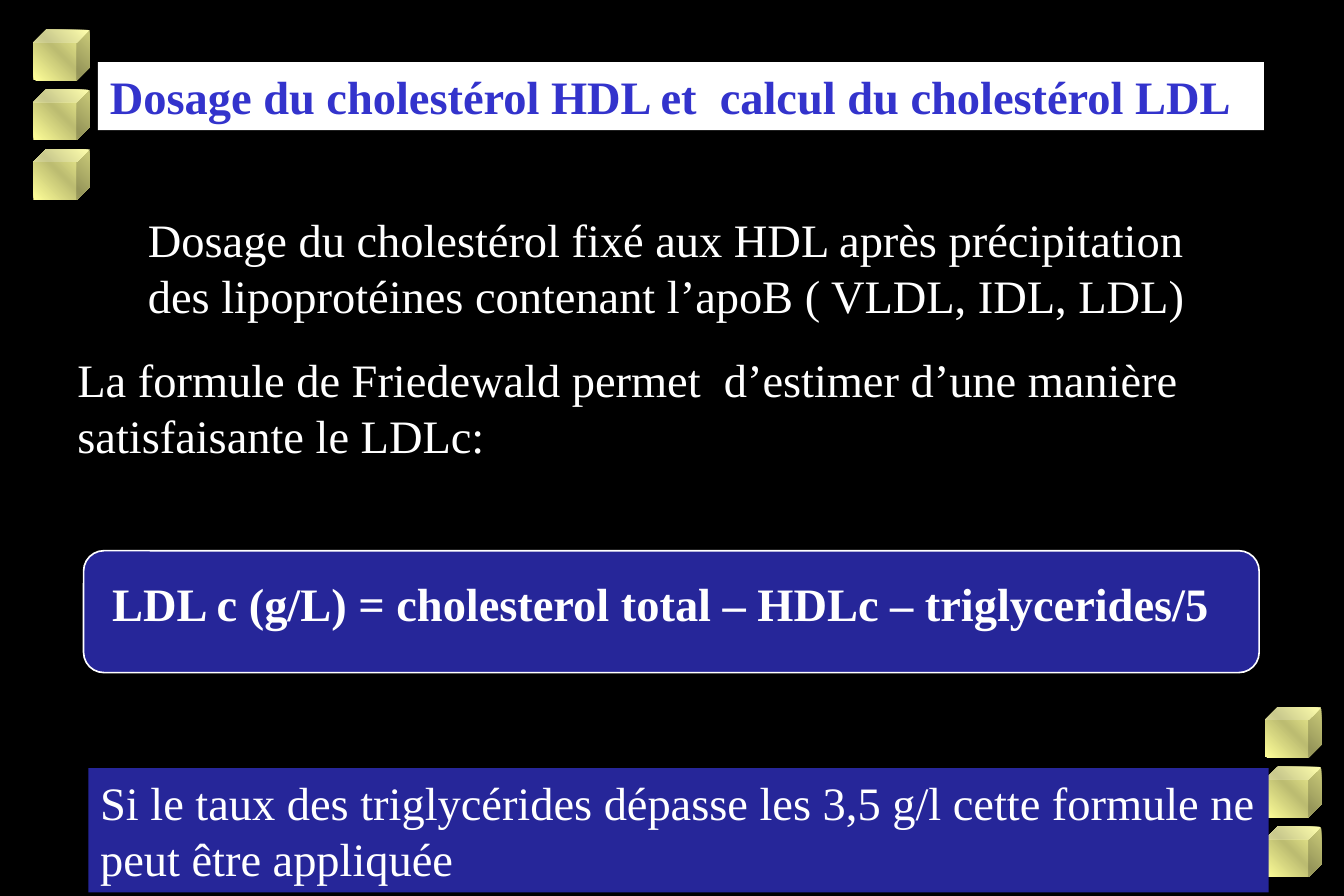
from copy import deepcopy

from pptx import Presentation
from pptx.dml.color import RGBColor
from pptx.enum.shapes import MSO_SHAPE as Shape
from pptx.enum.text import MSO_ANCHOR as Anchor, PP_ALIGN as Align
from pptx.util import Pt

PX = 9144  # 100 px to the inch
BLACK = RGBColor(0, 0, 0)
WHITE = RGBColor(255, 255, 255)
BLUE = RGBColor(0x33, 0x33, 0xCC)
NAVY = RGBColor(0x26, 0x26, 0x99)
CREAM = RGBColor(0xFF, 0xFF, 0x99)
OLIVE = RGBColor(0xBC, 0xBC, 0x71)

SIZE = (1125, 750)
TITLE = ("Dosage du cholestérol HDL et  calcul du cholestérol LDL", (82, 52, 976, 57))
NOTES = [
    ("Dosage du cholestérol fixé aux HDL après précipitation "
     "des lipoprotéines contenant l’apoB ( VLDL, IDL, LDL)", (114, 172, 890, 104)),
    ("La formule de Friedewald permet  d’estimer d’une manière "
     "satisfaisante le LDLc:", (55, 289, 1047, 104)),
]
FORMULA = ("LDL c (g/L) = cholesterol total – HDLc – triglycerides/5", (70, 461, 984, 102))
LIMIT = ("Si le taux des triglycérides dépasse les 3,5 g/l cette formule ne "
         "peut être appliquée", (74, 643, 988, 104))

CUBE = (47, 42)
STEP = 50
STACKS = [(28, 25), (1059, 592)]
STOPS = [(0, CREAM), (0.5, OLIVE), (1, CREAM)]

FONT = {"name": "Times New Roman", "size": Pt(28), "bold": False}
FRAME = {"word_wrap": True, "vertical_anchor": Anchor.TOP}


def emu(box):
    return [n * PX for n in box]


def put(obj, vals):
    for key, val in vals.items():
        setattr(obj, key, val)


def write(shape, text, color=WHITE, bold=False, inset=(10, 5)):
    """Fill a shape with left-aligned text, inset from its left and top edges."""
    left, top = emu(inset)
    frame = shape.text_frame
    put(frame, FRAME | {"margin_left": left, "margin_top": top})
    para = frame.paragraphs[0]
    para.alignment = Align.LEFT
    run = para.add_run()
    run.text = text
    put(run.font, FONT | {"bold": bold})
    run.font.color.rgb = color


def paint(shape, color):
    shape.fill.solid()
    shape.fill.fore_color.rgb = color


def draw(slide, kind, box):
    shape = slide.shapes.add_shape(kind, *emu(box))
    shape.shadow.inherit = False
    shape.line.fill.background()
    return shape


def shade(shape):
    """Give a shape the three-stop diagonal gradient."""
    fill = shape.fill
    fill.gradient()
    fill.gradient_angle = 45
    last = fill.gradient_stops[-1]._gs
    last.addnext(deepcopy(last))
    for stop, (pos, color) in zip(fill.gradient_stops, STOPS):
        stop.position = pos
        stop.color.rgb = color


def main():
    deck = Presentation()
    deck.slide_width, deck.slide_height = emu(SIZE)
    slide = deck.slides.add_slide(deck.slide_layouts[5])
    back = slide.background.fill
    back.solid()
    back.fore_color.rgb = BLACK

    for left, top in STACKS:
        for row in range(3):
            shade(draw(slide, Shape.CUBE, (left, top + row * STEP, *CUBE)))

    text, box = TITLE
    title = slide.shapes.title
    put(title, dict(zip(("left", "top", "width", "height"), emu(box))))
    paint(title, WHITE)
    write(title, text, BLUE, True)

    for text, box in NOTES:
        write(slide.shapes.add_textbox(*emu(box)), text)

    text, box = FORMULA
    panel = draw(slide, Shape.ROUNDED_RECTANGLE, box)
    paint(panel, NAVY)
    panel.line.color.rgb = WHITE
    panel.line.width = Pt(1)
    write(panel, text, bold=True, inset=(19, 15))

    text, box = LIMIT
    band = draw(slide, Shape.RECTANGLE, box)
    paint(band, NAVY)
    write(band, text)

    deck.save("out.pptx")


if __name__ == "__main__":
    main()
